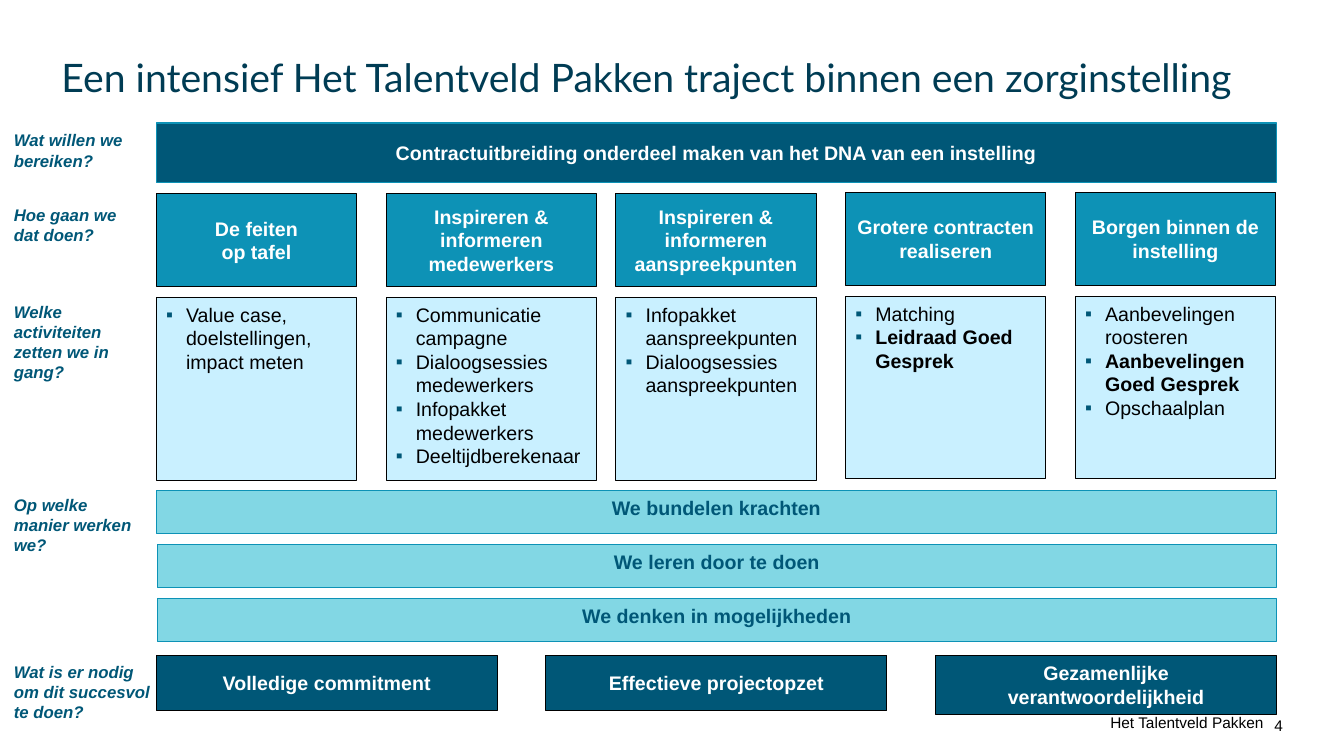
from lxml import etree
from pptx import Presentation
from pptx import util as u
from pptx.dml.color import RGBColor
from pptx.enum import shapes, text
from pptx.oxml.ns import qn

COLOURS = {
    "title": "003C54", "navy": "005777", "blue": "0D92B6", "aqua": "82D7E4",
    "pale": "C9F0FF", "black": "000000", "white": "FFFFFF",
}
ALIGN = text.PP_ALIGN
ANCHOR = text.MSO_ANCHOR
DEFAULT_INSETS = (0.25, 0.13, 0.25, 0.13)
BAR_INSETS = (0.13, 0.13, 0.13, 0.13)
NO_INSETS = (0, 0, 0, 0)


class SlideBuilder:
    """Hold the style and the current slide, and draw each kind of element."""

    def __init__(self, deck):
        self.page = deck.slides.add_slide(deck.slide_layouts[6])

    def colour(self, name):
        return RGBColor.from_string(COLOURS[name])

    def fill_text(self, box, lines, colour, align=ALIGN.CENTER, anchor=ANCHOR.MIDDLE,
                  insets=DEFAULT_INSETS, bullet=False, wrap=True, **font):
        frame = box.text_frame
        sides = ("margin_left", "margin_top", "margin_right", "margin_bottom")
        layout = {"word_wrap": wrap, "vertical_anchor": anchor}
        layout.update(zip(sides, map(u.Cm, insets)))
        for key, value in layout.items():
            setattr(frame, key, value)
        style = {"name": "Arial", "size": 14, "bold": False, "italic": False, **font}
        style["size"] = u.Pt(style["size"])
        for number, line in enumerate(lines):
            para = frame.paragraphs[0] if number == 0 else frame.add_paragraph()
            para.alignment = align
            if bullet:
                self.add_bullet(para)
            span = para.add_run()
            span.text = line.strip("*")
            for key, value in style.items():
                setattr(span.font, key, value)
            span.font.bold = style["bold"] or line.startswith("*")
            span.font.color.rgb = self.colour(colour)

    def add_bullet(self, para):
        props = para._p.get_or_add_pPr()
        props.set("marL", str(u.Cm(0.5)))
        props.set("indent", str(-u.Cm(0.5)))
        shade = etree.SubElement(props, qn("a:buClr"))
        etree.SubElement(shade, qn("a:srgbClr"), val=COLOURS["navy"])
        etree.SubElement(props, qn("a:buFont"), typeface="Arial")
        etree.SubElement(props, qn("a:buChar"), char="▪")

    def text_box(self, place, lines, colour, **options):
        box = self.page.shapes.add_textbox(*map(u.Cm, place))
        self.fill_text(box, lines, colour, **options)

    def panel(self, place, lines, fill, line, colour, **options):
        box = self.page.shapes.add_shape(
            shapes.MSO_SHAPE.RECTANGLE, *map(u.Cm, place))
        box.shadow.inherit = False
        box.fill.solid()
        box.fill.fore_color.rgb = self.colour(fill)
        box.line.color.rgb = self.colour(line)
        box.line.width = u.Pt(0.75)
        self.fill_text(box, lines, colour, **options)

    def label(self, top, width, height, words):
        self.text_box((0.1, top, width, height), [words], "navy", size=12,
                      bold=True, italic=True, align=ALIGN.LEFT, anchor=ANCHOR.TOP)

    def column(self, left, top, width, heading, activities):
        self.panel((left, top, width, 2.34), heading, "blue", "black", "white",
                   bold=True)
        self.panel((left, top + 2.62, width, 4.6), activities, "pale", "black",
                   "black", align=ALIGN.LEFT, anchor=ANCHOR.TOP, bullet=True)


LABELS = [
    (3.15, 4.37, 1.32, "Wat willen we bereiken?"),
    (5.03, 3.6, 1.27, "Hoe gaan we dat doen?"),
    (7.47, 3.6, 2.31, "Welke activiteiten zetten we in gang?"),
    (12.34, 3.6, 1.83, "Op welke manier werken we?"),
    (16.54, 3.96, 1.8, "Wat is er nodig om dit succesvol te doen?"),
]
COLUMNS = [
    (4.88, 5.05, ["De feiten", "op tafel"],
     ["Value case, doelstellingen, impact meten"]),
    (4.88, 5.31, ["Inspireren & informeren medewerkers"],
     ["Communicatie campagne", "Dialoogsessies medewerkers",
      "Infopakket medewerkers", "Deeltijdberekenaar"]),
    (4.88, 5.05, ["Inspireren & informeren aanspreekpunten"],
     ["Infopakket aanspreekpunten", "Dialoogsessies aanspreekpunten"]),
    (4.85, 5.05, ["Grotere contracten realiseren"],
     ["Matching", "*Leidraad Goed Gesprek"]),
    (4.85, 5.05, ["Borgen binnen de instelling"],
     ["Aanbevelingen roosteren", "*Aanbevelingen Goed Gesprek", "Opschaalplan"]),
]
PRINCIPLES = [
    (3.94, "We bundelen krachten"),
    (3.96, "We leren door te doen"),
    (3.96, "We denken in mogelijkheden"),
]
CONDITIONS = [
    (1.4, "Volledige commitment"),
    (1.4, "Effectieve projectopzet"),
    (1.5, "Gezamenlijke verantwoordelijkheid"),
]
LEFT, RIGHT = 3.94, 32.17


def main():
    deck = Presentation()
    deck.slide_width, deck.slide_height = u.Cm(33.87), u.Cm(19.05)
    slide = SlideBuilder(deck)
    slide.text_box((1.55, 1.32, 30.78, 1.22),
                   ["Een intensief Het Talentveld Pakken traject binnen een zorginstelling"],
                   "title", name="Lato", size=28, align=ALIGN.LEFT, insets=NO_INSETS)
    for label in LABELS:
        slide.label(*label)
    slide.panel((LEFT, 3.1, RIGHT - LEFT, 1.5),
                ["Contractuitbreiding onderdeel maken van het DNA van een instelling"],
                "navy", "blue", "white", bold=True, insets=BAR_INSETS)
    for number, column in enumerate(COLUMNS):
        slide.column(LEFT + 5.79 * number, *column)
    for number, (left, words) in enumerate(PRINCIPLES):
        slide.panel((left, 12.37 + 1.36 * number, RIGHT - left, 1.07), [words],
                    "aqua", "blue", "navy", bold=True, anchor=ANCHOR.TOP,
                    insets=BAR_INSETS)
    for number, (height, words) in enumerate(CONDITIONS):
        slide.panel((LEFT + 9.82 * number, 16.51, 8.59, height), [words],
                    "navy", "black", "white", bold=True)
    slide.text_box((27.97, 17.96, 3.89, 0.48), ["Het Talentveld Pakken"], "black",
                   size=11, anchor=ANCHOR.BOTTOM, insets=NO_INSETS, wrap=False)
    slide.text_box((31.62, 18.03, 0.71, 0.48), ["4"], "black", size=11,
                   align=ALIGN.RIGHT, insets=NO_INSETS)
    deck.save("out.pptx")


if __name__ == "__main__":
    main()
